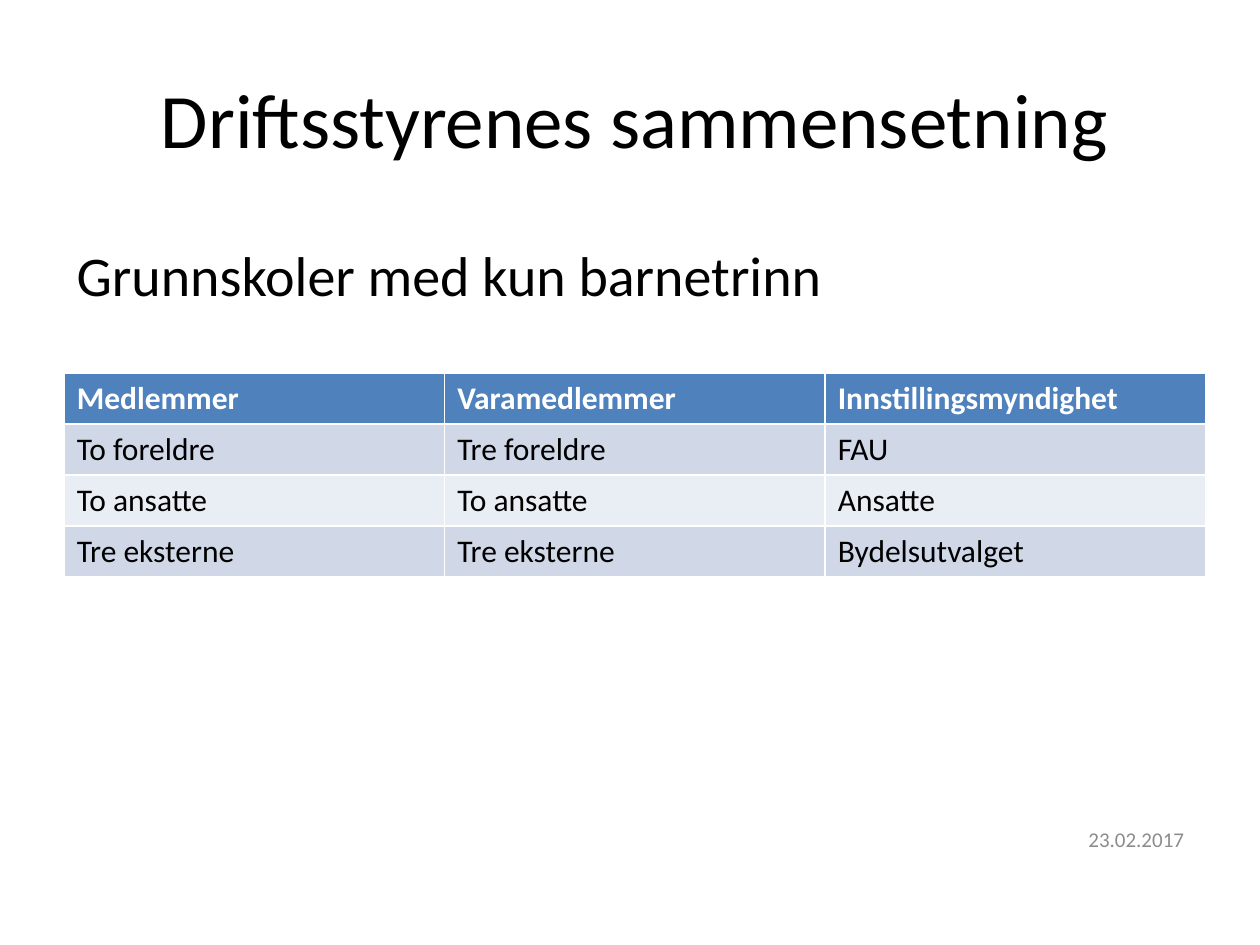
from pptx import Presentation
from pptx import util as u
from pptx.dml.color import RGBColor
from pptx.enum import text

BLACK = RGBColor(0x00, 0x00, 0x00)
WHITE = RGBColor(0xFF, 0xFF, 0xFF)
GREY = RGBColor(0x8C, 0x8C, 0x8C)
HEADER_BLUE = RGBColor(0x4F, 0x81, 0xBD)
BAND_DARK = RGBColor(0xD0, 0xD8, 0xE8)
BAND_LIGHT = RGBColor(0xE9, 0xED, 0xF4)

LEFT = u.Inches(0.51)
WIDTH = u.Inches(9.06)
ROWS = [
    ["Medlemmer", "Varamedlemmer", "Innstillingsmyndighet"],
    ["To foreldre", "Tre foreldre", "FAU"],
    ["To ansatte", "To ansatte", "Ansatte"],
    ["Tre eksterne", "Tre eksterne", "Bydelsutvalget"],
]


def write_text(frame, content, size=18, color=BLACK, bold=False,
               align=text.PP_ALIGN.LEFT, anchor=text.MSO_ANCHOR.TOP):
    """Write one formatted paragraph into a text frame."""
    frame.word_wrap = True
    frame.vertical_anchor = anchor
    paragraph = frame.paragraphs[0]
    paragraph.alignment = align
    run = paragraph.add_run()
    run.text = content
    run.font.name = "Calibri"
    run.font.size = u.Pt(size)
    run.font.bold = bold
    run.font.color.rgb = color


def add_title(slide, content):
    """Place and fill the title placeholder."""
    title = slide.shapes.title
    title.left, title.top = LEFT, u.Inches(0.52)
    title.width, title.height = WIDTH, u.Inches(1.18)
    write_text(title.text_frame, content, size=44, align=text.PP_ALIGN.CENTER)


def add_text(slide, content, left, top, width, height, **style):
    """Add a text box with one formatted paragraph."""
    box = slide.shapes.add_textbox(left, top, width, height)
    write_text(box.text_frame, content, **style)


def add_members_table(slide, rows):
    """Add the table of members with a header row and banded body rows."""
    frame = slide.shapes.add_table(len(rows), len(rows[0]), LEFT, u.Inches(2.96),
                                   WIDTH, u.Inches(1.62))
    for row_index, row in enumerate(rows):
        is_header = row_index == 0
        band = BAND_DARK if row_index % 2 else BAND_LIGHT
        for column_index, content in enumerate(row):
            cell = frame.table.cell(row_index, column_index)
            cell.fill.solid()
            cell.fill.fore_color.rgb = HEADER_BLUE if is_header else band
            write_text(cell.text_frame, content, bold=is_header,
                       color=WHITE if is_header else BLACK)


def main():
    """Build and save the slide."""
    presentation = Presentation()
    presentation.slide_width = u.Inches(10)
    presentation.slide_height = u.Inches(7.5)
    slide = presentation.slides.add_slide(presentation.slide_layouts[5])
    add_text(slide, "23.02.2017", u.Inches(8.54), u.Inches(6.46), u.Inches(1.21),
             u.Inches(0.4), size=12, color=GREY, anchor=text.MSO_ANCHOR.MIDDLE)
    add_title(slide, "Driftsstyrenes sammensetning")
    add_text(slide, "Grunnskoler med kun barnetrinn", LEFT, u.Inches(1.86), WIDTH,
             u.Inches(0.79), size=32)
    add_members_table(slide, ROWS)
    presentation.save("out.pptx")


if __name__ == "__main__":
    main()
